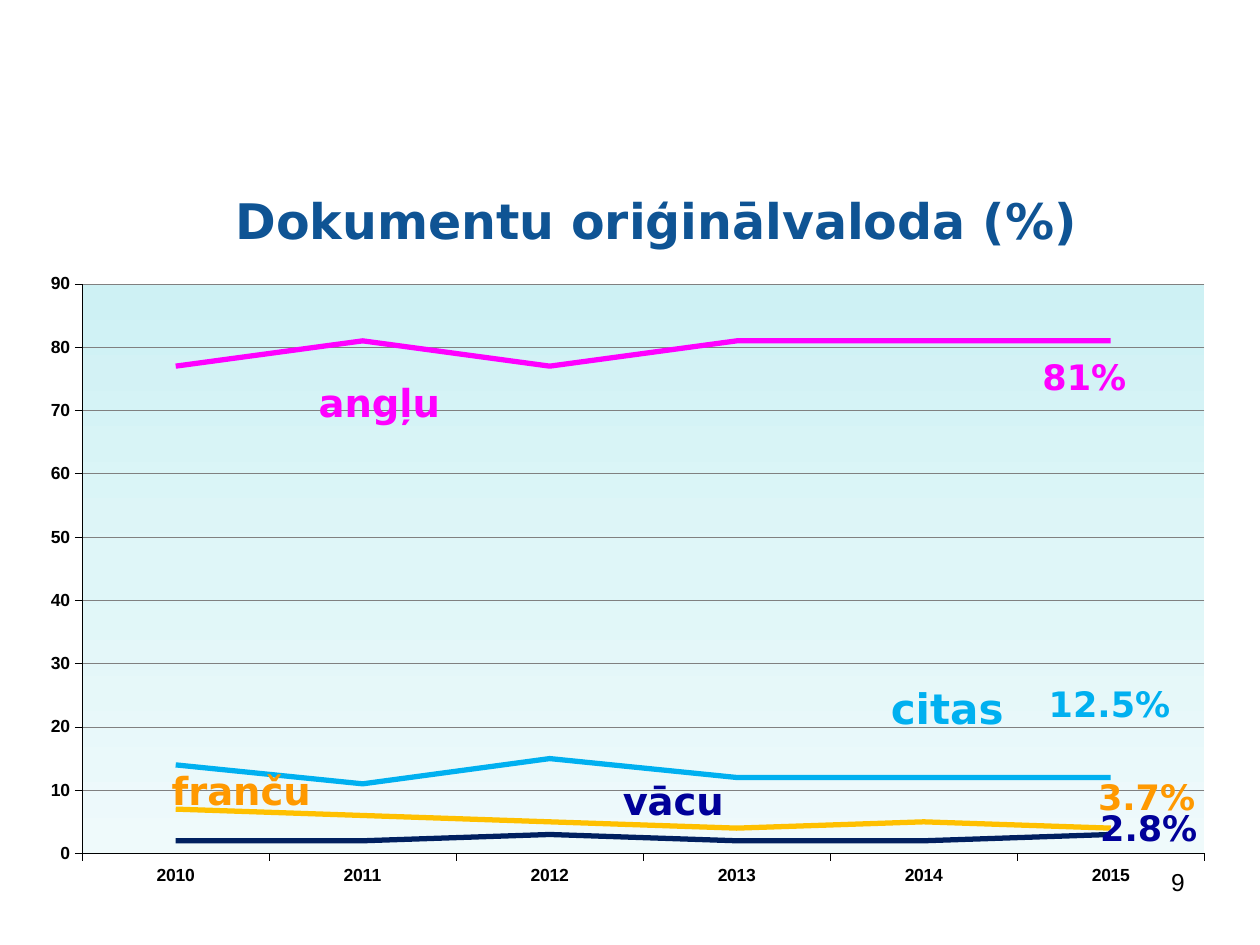
from lxml.etree import SubElement
from pptx import Presentation
from pptx.chart.data import CategoryChartData
from pptx.dml.color import RGBColor
from pptx.enum.chart import XL_CHART_TYPE as ChartType, XL_TICK_MARK as TickMark
from pptx.enum.text import MSO_ANCHOR as Anchor, MSO_AUTO_SIZE as AutoSize, PP_ALIGN as Align
from pptx.oxml import parse_xml
from pptx.oxml.ns import nsdecls, qn
from pptx.util import Pt

HEADING_FONT = "DejaVu Sans"
BODY_FONT = "Arial"
MAGENTA, ORANGE, SKY, NAVY = "FF00FF", "FF9900", "00B0F0", "000099"

YEARS = ["2010", "2011", "2012", "2013", "2014", "2015"]
LANGUAGES = [
    ("vācu", "002060", (2, 2, 3, 2, 2, 3)),
    ("angļu", MAGENTA, (77, 81, 77, 81, 81, 81)),
    ("franču", "FFC000", (7, 6, 5, 4, 5, 4)),
    ("citas", SKY, (14, 11, 15, 12, 12, 12)),
]
LABELS = [
    ("angļu", (175, 213.3, 136, 34), 22, MAGENTA),
    ("franču", (91, 434.5, 104, 34), 22, ORANGE),
    ("citas", (502, 386.4, 102, 36), 24, SKY),
    ("vācu", (348.8, 440.6, 127, 34), 22, NAVY),
    ("81%", (588.6, 199.4, 95, 32), 20, MAGENTA),
    ("3.7%", (620.4, 439.5, 87, 32), 20, ORANGE),
    ("2.8%", (621.6, 457.2, 84, 32), 20, NAVY),
    ("12.5%", (592.2, 386.6, 91, 32), 20, SKY),
]


def color(value):
    """Return the colour for a hex string."""
    return RGBColor.from_string(value)


def set_font(font, hex_color, **values):
    """Apply format values and a colour to a font."""
    for name, value in values.items():
        setattr(font, name, value)
    font.color.rgb = color(hex_color)


def place(shape, box):
    """Move a shape to a box given in points."""
    for name, value in zip(("left", "top", "width", "height"), box):
        setattr(shape, name, Pt(value))


def add_title(slide, box):
    """Fill the title placeholder."""
    title = slide.shapes.title
    place(title, box)
    frame = title.text_frame
    for name, value in {"text": "Dokumentu oriģinālvaloda (%)", "word_wrap": True,
                        "auto_size": AutoSize.NONE,
                        "vertical_anchor": Anchor.MIDDLE}.items():
        setattr(frame, name, value)
    paragraph = frame.paragraphs[0]
    paragraph.alignment = Align.CENTER
    properties = paragraph._p.get_or_add_pPr()
    properties.set("marL", str(Pt(28)))
    properties.set("indent", "0")
    set_font(paragraph.font, "0F5494", name=HEADING_FONT, size=Pt(28), bold=True)


def add_label(slide, text, box, hex_color, align=Align.LEFT, **font_values):
    """Add a one-line text box."""
    shape = slide.shapes.add_textbox(*map(Pt, box))
    frame = shape.text_frame
    frame.word_wrap = True
    frame.text = text
    paragraph = frame.paragraphs[0]
    paragraph.alignment = align
    set_font(paragraph.font, hex_color, **font_values)


def style_axis(axis):
    """Give an axis its tick marks, line and font."""
    axis.major_tick_mark = TickMark.OUTSIDE
    axis.minor_tick_mark = TickMark.NONE
    axis.format.line.width = Pt(0.25)
    axis.format.line.color.rgb = color("000000")
    set_font(axis.tick_labels.font, "000000", name=BODY_FONT, size=Pt(10), bold=True)


def style_plot_area(chart):
    """Set the inner layout and the gradient of the plot area."""
    area = chart._chartSpace.chart.plotArea
    for old in area.findall(qn("c:layout")):
        area.remove(old)
    layout = parse_xml(f"<c:layout {nsdecls('c')}><c:manualLayout/></c:layout>")
    for tag, value in (("layoutTarget", "inner"), ("xMode", "edge"), ("yMode", "edge"),
                       ("x", 0.043), ("y", 0.015), ("w", 0.952), ("h", 0.87)):
        SubElement(layout[0], qn(f"c:{tag}")).set("val", str(value))
    area.insert(0, layout)
    stops = "".join(
        f'<a:gs pos="{position}"><a:srgbClr val="{value}"/></a:gs>'
        for position, value in ((0, "CEF1F4"), (50000, "DFF6F8"), (100000, "EFFAFB")))
    area.append(parse_xml(
        f"<c:spPr {nsdecls('c', 'a')}><a:gradFill><a:gsLst>{stops}</a:gsLst>"
        '<a:lin ang="5400000" scaled="0"/></a:gradFill><a:ln><a:noFill/></a:ln></c:spPr>'))


def add_language_chart(slide, box):
    """Add the line chart of original languages."""
    data = CategoryChartData()
    data.categories = YEARS
    for name, _, values in LANGUAGES:
        data.add_series(name, values)
    chart = slide.shapes.add_chart(ChartType.LINE, *map(Pt, box), data).chart
    chart.has_legend = False
    chart.has_title = False
    set_font(chart.font, "000000", name=BODY_FONT, size=Pt(10))
    plot = chart.plots[0]
    plot.vary_by_categories = False
    for series, (_, hex_color, _) in zip(plot.series, LANGUAGES):
        series.smooth = False
        series.format.line.width = Pt(3)
        series.format.line.color.rgb = color(hex_color)
    value_axis = chart.value_axis
    for axis in (chart.category_axis, value_axis):
        style_axis(axis)
    for name, value in {"minimum_scale": 0, "maximum_scale": 90, "major_unit": 10,
                        "has_major_gridlines": True}.items():
        setattr(value_axis, name, value)
    value_axis.tick_labels.number_format = "0"
    value_axis.tick_labels.number_format_is_linked = False
    grid_line = value_axis.major_gridlines.format.line
    grid_line.width = Pt(0.25)
    grid_line.color.rgb = color("808080")
    style_plot_area(chart)


def main():
    """Build and save the slide."""
    presentation = Presentation()
    presentation.slide_width, presentation.slide_height = Pt(720), Pt(540)
    slide = presentation.slides.add_slide(presentation.slide_layouts[5])
    add_title(slide, (36.8, 88.9, 648, 73.4))
    add_language_chart(slide, (18, 156.6, 673.6, 374.2))
    for text, box, size, hex_color in LABELS:
        add_label(slide, text, box, hex_color, name=HEADING_FONT, size=Pt(size), bold=True)
    add_label(slide, "9", (516, 492, 168, 37), "000000", Align.RIGHT,
              name=BODY_FONT, size=Pt(14))
    presentation.save("out.pptx")


if __name__ == "__main__":
    main()
